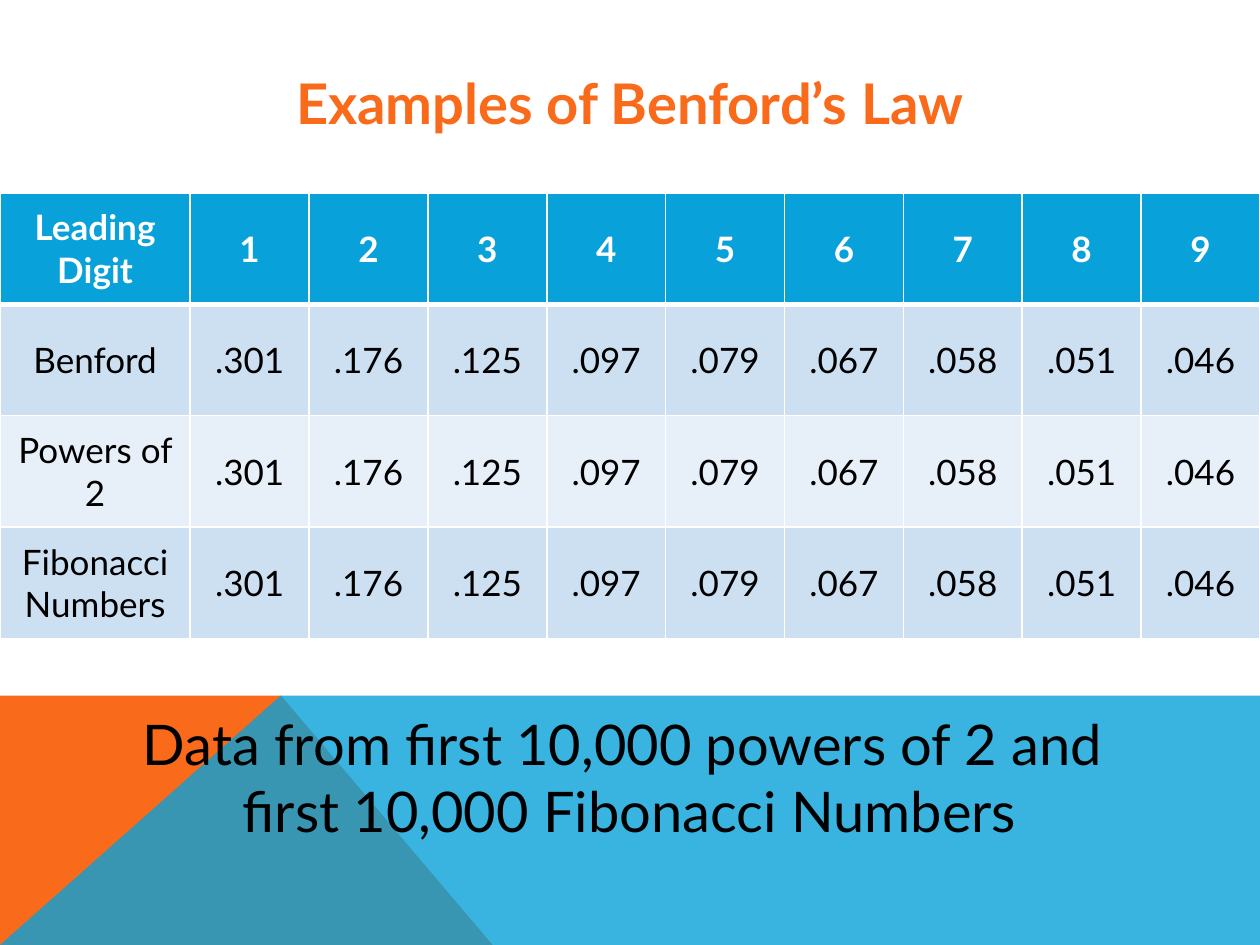
"""Build a slide comparing leading-digit frequencies with Benford's law."""
from dataclasses import dataclass

from lxml.etree import SubElement
from pptx import Presentation
from pptx.dml.color import RGBColor
from pptx.enum.text import MSO_ANCHOR as Anchor, PP_ALIGN as Align
from pptx.oxml.ns import qn
from pptx.util import Inches, Pt


@dataclass(frozen=True)
class Theme:
    font: str = "Lato"
    heading_size: int = 32
    table_size: int = 20
    orange: str = "F96A1B"
    blue: str = "08A1D9"
    band_dark: str = "CCE0F1"
    band_light: str = "E7F0F8"
    white: str = "FFFFFF"
    black: str = "000000"


THEME = Theme()
WIDTH, HEIGHT = 10, 7.5
FOOTER_TOP, PEAK = 5.52, 2.23
LABEL_WIDTH, ROW_HEIGHT = 1.51, 0.885
FREQUENCIES = [".301", ".176", ".125", ".097", ".079", ".067", ".058", ".051", ".046"]
ROWS = [
    [("Leading", "Digit"), *[(str(digit),) for digit in range(1, 10)]],
    *[[label, *[(value,) for value in FREQUENCIES]]
      for label in (("Benford",), ("Powers of 2",), ("Fibonacci", "Numbers"))],
]


def paint(target, color):
    target.fill.solid()
    target.fill.fore_color.rgb = RGBColor.from_string(color)


def write(frame, lines, size, color, bold=False):
    frame.word_wrap = True
    for index, line in enumerate(lines):
        para = frame.paragraphs[0] if index == 0 else frame.add_paragraph()
        para.alignment = Align.CENTER
        span = para.add_run()
        span.text = line
        span.font.name = THEME.font
        span.font.size = Pt(size)
        span.font.bold = bold
        span.font.color.rgb = RGBColor.from_string(color)


def place(shape, left, top, width, height):
    shape.left, shape.top = Inches(left), Inches(top)
    shape.width, shape.height = Inches(width), Inches(height)


def add_polygon(page, points, color, opacity=100):
    corners = [(Inches(x), Inches(y)) for x, y in points]
    builder = page.shapes.build_freeform(*corners[0], scale=1.0)
    builder.add_line_segments(corners[1:], close=True)
    shape = builder.convert_to_shape()
    shape.shadow.inherit = False
    shape.line.fill.background()
    paint(shape, color)
    if opacity < 100:
        tint = shape.fill._xPr.find(".//" + qn("a:srgbClr"))
        SubElement(tint, qn("a:alpha"), val=str(opacity * 1000))


def add_borders(cell, top, bottom):
    properties = cell._tc.get_or_add_tcPr()
    for side, points in (("L", 1), ("R", 1), ("T", top), ("B", bottom)):
        line = SubElement(properties, qn(f"a:ln{side}"), w=str(Pt(points)))
        fill = SubElement(line, qn("a:solidFill"))
        SubElement(fill, qn("a:srgbClr"), val=THEME.white)


def add_frequency_table(page):
    row_count, column_count = len(ROWS), len(ROWS[0])
    table = page.shapes.add_table(
        row_count, column_count, Inches(0), Inches(1.53),
        Inches(WIDTH), Inches(ROW_HEIGHT * row_count)).table
    digit_width = (WIDTH - LABEL_WIDTH) / (column_count - 1)
    for index, column in enumerate(table.columns):
        column.width = Inches(digit_width if index else LABEL_WIDTH)
    for row_index, row in enumerate(ROWS):
        header = row_index == 0
        band = THEME.band_dark if row_index % 2 else THEME.band_light
        for column_index, lines in enumerate(row):
            cell = table.cell(row_index, column_index)
            cell.vertical_anchor = Anchor.MIDDLE
            add_borders(cell, 3 if row_index == 1 else 1, 3 if header else 1)
            paint(cell, THEME.blue if header else band)
            write(cell.text_frame, lines, THEME.table_size,
                  THEME.white if header else THEME.black, header)


def add_title(page, text):
    title = page.shapes.title
    place(title, 0, 0.49, WIDTH, 0.64)
    title.text_frame.vertical_anchor = Anchor.MIDDLE
    write(title.text_frame, [text], THEME.heading_size, THEME.orange, True)


def add_caption(page, lines):
    box = page.shapes.add_textbox(Inches(0), Inches(5.58), Inches(WIDTH), Inches(1.18))
    write(box.text_frame, lines, THEME.heading_size, THEME.black)


def main():
    deck = Presentation()
    deck.slide_width, deck.slide_height = Inches(WIDTH), Inches(HEIGHT)
    page = deck.slides.add_slide(deck.slide_layouts[5])
    paint(page.background, THEME.white)
    add_polygon(page, [(0, HEIGHT), (0, FOOTER_TOP), (PEAK, FOOTER_TOP), (3.91, HEIGHT)],
                THEME.orange)
    add_polygon(page, [(0, HEIGHT), (PEAK, FOOTER_TOP), (WIDTH, FOOTER_TOP), (WIDTH, HEIGHT)],
                THEME.blue, 80)
    add_title(page, "Examples of Benford’s Law")
    add_frequency_table(page)
    add_caption(page, ["Data from first 10,000 powers of 2 and ",
                       "first 10,000 Fibonacci Numbers"])
    deck.save("out.pptx")


if __name__ == "__main__":
    main()
